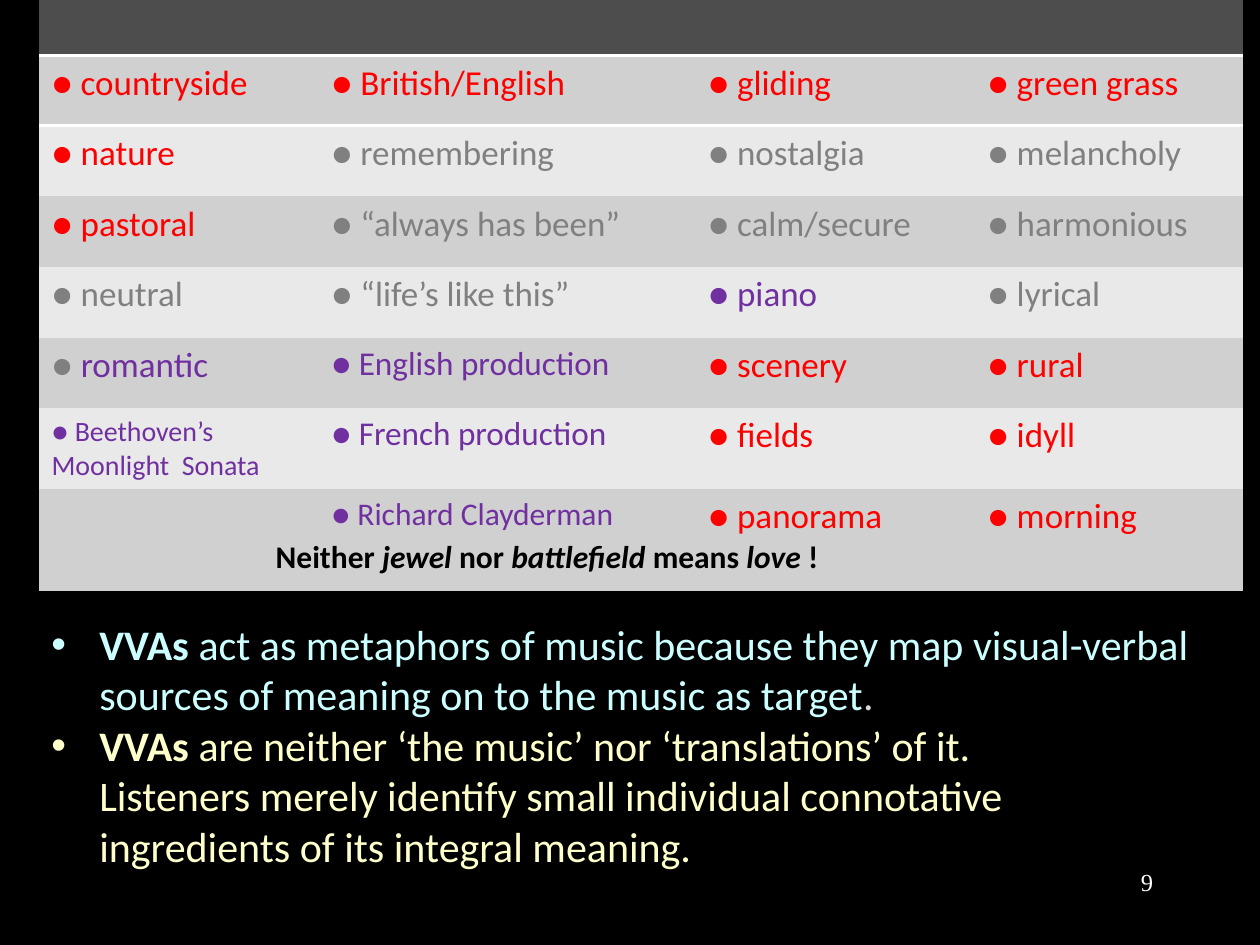
from lxml import etree
from pptx import Presentation
from pptx.dml.color import RGBColor
from pptx.enum.text import PP_ALIGN
from pptx.oxml.ns import qn
from pptx.util import Inches, Pt

RIGHT = PP_ALIGN.RIGHT
BLACK = RGBColor(0x00, 0x00, 0x00)
WHITE = RGBColor(0xFF, 0xFF, 0xFF)
RED = RGBColor(0xFF, 0x00, 0x00)
GREY = RGBColor(0x80, 0x80, 0x80)
PURPLE = RGBColor(0x70, 0x30, 0xA0)
HEAD = RGBColor(0x4D, 0x4D, 0x4D)
DARK = RGBColor(0xD0, 0xD0, 0xD0)
LIGHT = RGBColor(0xE9, 0xE9, 0xE9)
CYAN = RGBColor(0xCC, 0xFF, 0xFF)
CREAM = RGBColor(0xFF, 0xFF, 0xCC)
SILVER = RGBColor(0xD9, 0xD9, 0xD9)
PLAIN_TABLE = "{2D5ABB26-0587-4C30-8999-92F81FD0307C}"

# The slide is a grid of 100 columns by 75 rows.
COLS, ROWS = 100, 75
WIDE, HIGH = Inches(10), Inches(7.5)
EDGE, SPAN = 3.1, 95.7

# Each cell: words, colour and, where it is not the usual one, size.
WORDS = [
    [("countryside", RED), ("British/English", RED), ("gliding", RED), ("green grass", RED)],
    [("nature", RED), ("remembering", GREY), ("nostalgia", GREY), ("melancholy", GREY)],
    [("pastoral", RED), ("“always has been”", GREY), ("calm/secure", GREY),
     ("harmonious", GREY)],
    [("neutral", GREY), ("“life’s like this”", GREY), ("piano", PURPLE), ("lyrical", GREY)],
    [("romantic", PURPLE), ("English production", PURPLE, 19), ("scenery", RED),
     ("rural", RED)],
    [("Beethoven’s Moonlight  Sonata", PURPLE, 16), ("French production", PURPLE, 19),
     ("fields", RED), ("idyll", RED)],
    [None, ("Richard Clayderman", PURPLE, 18), ("panorama", RED), ("morning", RED)],
]


def put(par, text, size=20, color=BLACK, font="Calibri", bold=False, italic=False):
    """Add text to a paragraph; a newline becomes a line break."""
    for n, line in enumerate(text.split("\n")):
        if n:
            par.add_line_break()
        run = par.add_run()
        run.text = line
        face = run.font
        face.name, face.size = font, Pt(size)
        face.bold, face.italic = bold, italic
        face.color.rgb = color


def mark(par, indent):
    """Give a paragraph a round bullet with a hanging indent."""
    props = par._p.get_or_add_pPr()
    props.set("marL", str(Inches(indent)))
    props.set("indent", str(-Inches(indent)))
    etree.SubElement(props, qn("a:buFont")).set("typeface", "Arial")
    etree.SubElement(props, qn("a:buChar")).set("char", "•")


def rule(cell, side, color, width):
    """Draw one border of a cell; side is a tag such as lnB."""
    line = etree.Element(qn("a:" + side), w=str(Pt(width)))
    fill = etree.SubElement(line, qn("a:solidFill"))
    etree.SubElement(fill, qn("a:srgbClr")).set("val", str(color))
    cell._tc.get_or_add_tcPr().insert(0, line)


class Deck:
    """Holds the grid and the current slide."""

    def __init__(self):
        self.show = Presentation()
        self.show.slide_width, self.show.slide_height = WIDE, HIGH
        self.slide = None

    def page(self, color):
        self.slide = self.show.slides.add_slide(self.show.slide_layouts[6])
        fill = self.slide.background.fill
        fill.solid()
        fill.fore_color.rgb = color

    def x(self, cols):
        return round(WIDE * cols / COLS)

    def y(self, rows):
        return round(HIGH * rows / ROWS)

    def box(self, left, top, width, height):
        shape = self.slide.shapes.add_textbox(
            self.x(left), self.y(top), self.x(width), self.y(height))
        shape.text_frame.word_wrap = True
        return shape.text_frame

    def table(self, left, top, widths, heights):
        grid = self.slide.shapes.add_table(
            len(heights), len(widths), self.x(left), self.y(top),
            self.x(sum(widths)), self.y(sum(heights))).table
        grid._tbl.tblPr.find(qn("a:tableStyleId")).text = PLAIN_TABLE
        for col, width in zip(grid.columns, widths):
            col.width = self.x(width)
        for row, height in zip(grid.rows, heights):
            row.height = self.y(height)
        return grid


def fill_words(grid):
    for r, row in enumerate(grid.rows):
        for c, cell in enumerate(row.cells):
            cell.fill.solid()
            if r == 0:
                cell.fill.fore_color.rgb = HEAD
                rule(cell, "lnB", WHITE, 2)
                continue
            cell.fill.fore_color.rgb = DARK if r % 2 else LIGHT
            if r == 1:
                rule(cell, "lnT", WHITE, 2)
            entry = WORDS[r - 1][c]
            if entry:
                word, color, size = (*entry, 20)[:3]
                par = cell.text_frame.paragraphs[0]
                dot = GREY if word == "romantic" else color
                put(par, "● ", size, dot)
                put(par, word, size, color)


def main():
    deck = Deck()
    deck.page(BLACK)

    number = deck.box(71.7, 68.3, 20.8, 5).paragraphs[0]
    number.alignment = RIGHT
    put(number, "9", size=14, color=WHITE, font="Times New Roman")

    fill_words(deck.table(EDGE, -1.5, [22.2, 29.9, 22.2, 21.3],
                          [5.9] + [5.6] * 5 + [6.4, 8.1]))

    remark = deck.box(20.9, 42.1, 63.4, 4).paragraphs[0]
    parts = ["Neither ", "jewel", " nor ", "battlefield", " means ", "love ", "!"]
    for n, part in enumerate(parts):
        put(remark, part, size=18, bold=True, italic=n % 2 == 1)

    points = deck.box(EDGE, 48.6, SPAN, 21.2)
    first, second = points.paragraphs[0], points.add_paragraph()
    for par, color, text in (
            (first, CYAN, "act as metaphors of music because they map visual-verbal "
                          "sources of meaning on to the music as target"),
            (second, CREAM, "are neither ‘the music’ nor ‘translations’ of it. \n"
                            "Listeners merely identify small individual connotative \n"
                            "ingredients of its integral meaning.")):
        mark(par, 0.38)
        put(par, "VVAs ", size=24, color=color, bold=True)
        put(par, text, size=24, color=color)
    put(first, ".", size=24, color=SILVER)

    deck.show.save("out.pptx")


if __name__ == "__main__":
    main()
